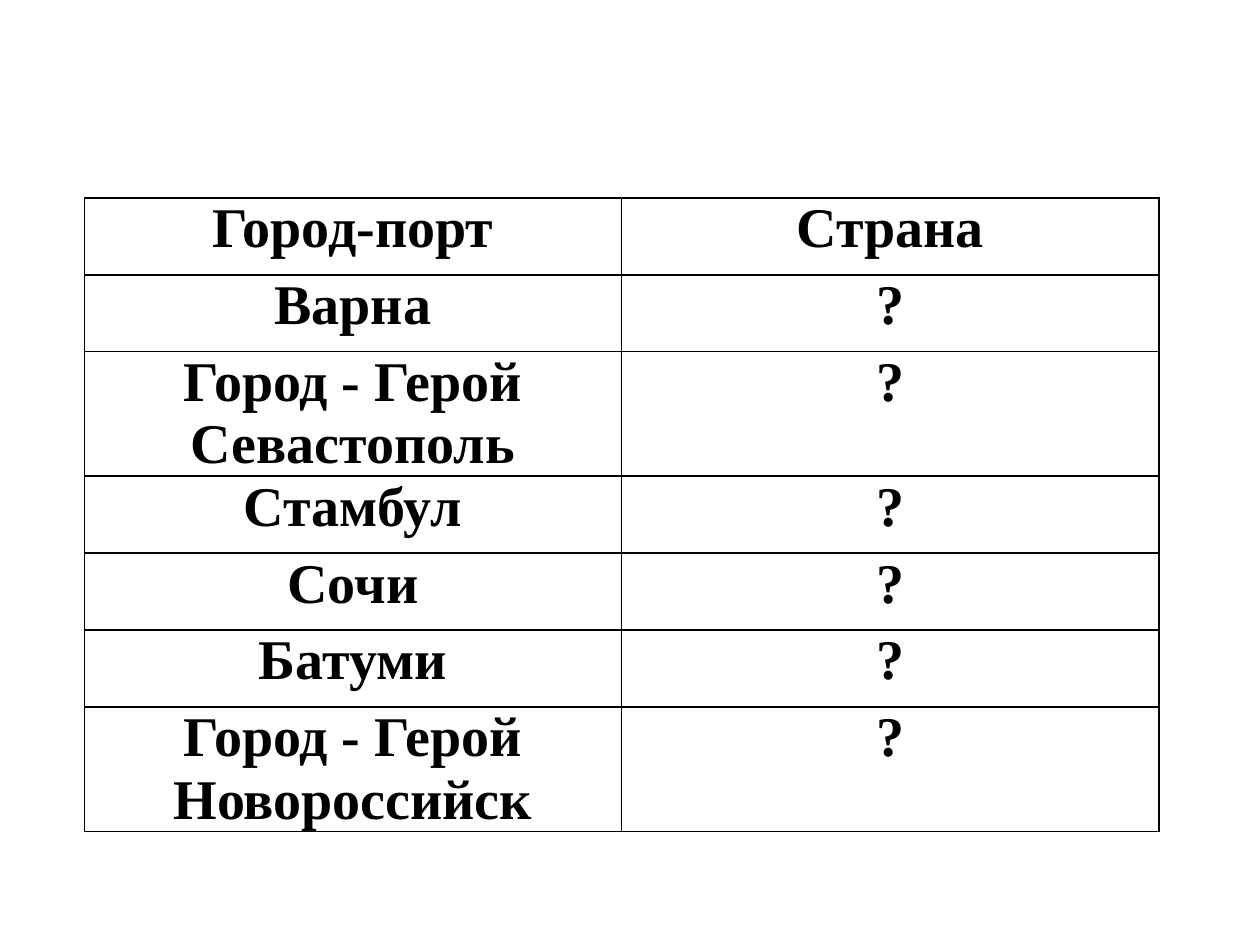
"""Build a slide with a table matching port cities to countries."""
from dataclasses import dataclass

from lxml.etree import SubElement
from pptx import Presentation
from pptx.dml.color import RGBColor
from pptx.enum.text import PP_ALIGN as Align
from pptx.oxml.ns import qn
from pptx.slide import Slide
from pptx.table import _Cell as Cell
from pptx.util import Cm, Pt

BLACK = RGBColor(0x00, 0x00, 0x00)
FONT = "Times New Roman"
BORDER_SIDES = ("a:lnL", "a:lnR", "a:lnT", "a:lnB")
COLUMN_WIDTH = Cm(10.83)
ROW_HEIGHT = Cm(1.55)


@dataclass(frozen=True)
class Port:
    city: tuple[str, ...]
    country: str = "?"


PORTS = (
    Port(("Город-порт",), "Страна"),
    Port(("Варна",)),
    Port(("Город - Герой Севастополь",)),
    Port(("Стамбул",)),
    Port(("Сочи",)),
    Port(("Батуми",)),
    Port(("Город - Герой", "Новороссийск")),
)


def draw_borders(cell: Cell) -> None:
    properties = cell._tc.get_or_add_tcPr()
    for position, side in enumerate(BORDER_SIDES):
        border = SubElement(properties, qn(side), w=str(Pt(1)))
        solid = SubElement(border, qn("a:solidFill"))
        SubElement(solid, qn("a:srgbClr"), val=str(BLACK))
        properties.insert(position, border)


def write_cell(cell: Cell, lines: tuple[str, ...]) -> None:
    cell.fill.background()
    cell.margin_left = cell.margin_right = Cm(0.18)
    cell.margin_top = cell.margin_bottom = 0
    draw_borders(cell)
    frame = cell.text_frame
    for number, line in enumerate(lines):
        paragraph = frame.add_paragraph() if number else frame.paragraphs[0]
        paragraph.alignment = Align.CENTER
        run = paragraph.add_run()
        run.text = line
        run.font.name = FONT
        run.font.size = Pt(32)
        run.font.bold = True
        run.font.color.rgb = BLACK


def draw_ports(slide: Slide, ports: tuple[Port, ...]) -> None:
    table = slide.shapes.add_table(
        len(ports), 2, Cm(1.7), Cm(3.99), COLUMN_WIDTH * 2, ROW_HEIGHT * len(ports)
    ).table
    table.first_row = table.horz_banding = False
    for column in table.columns:
        column.width = COLUMN_WIDTH
    for index, port in enumerate(ports):
        table.rows[index].height = ROW_HEIGHT
        write_cell(table.cell(index, 0), port.city)
        write_cell(table.cell(index, 1), (port.country,))


def main() -> None:
    presentation = Presentation()
    presentation.slide_width = Cm(25.4)
    presentation.slide_height = Cm(19.05)
    slide = presentation.slides.add_slide(presentation.slide_layouts[6])
    draw_ports(slide, PORTS)
    presentation.save("out.pptx")


if __name__ == "__main__":
    main()
